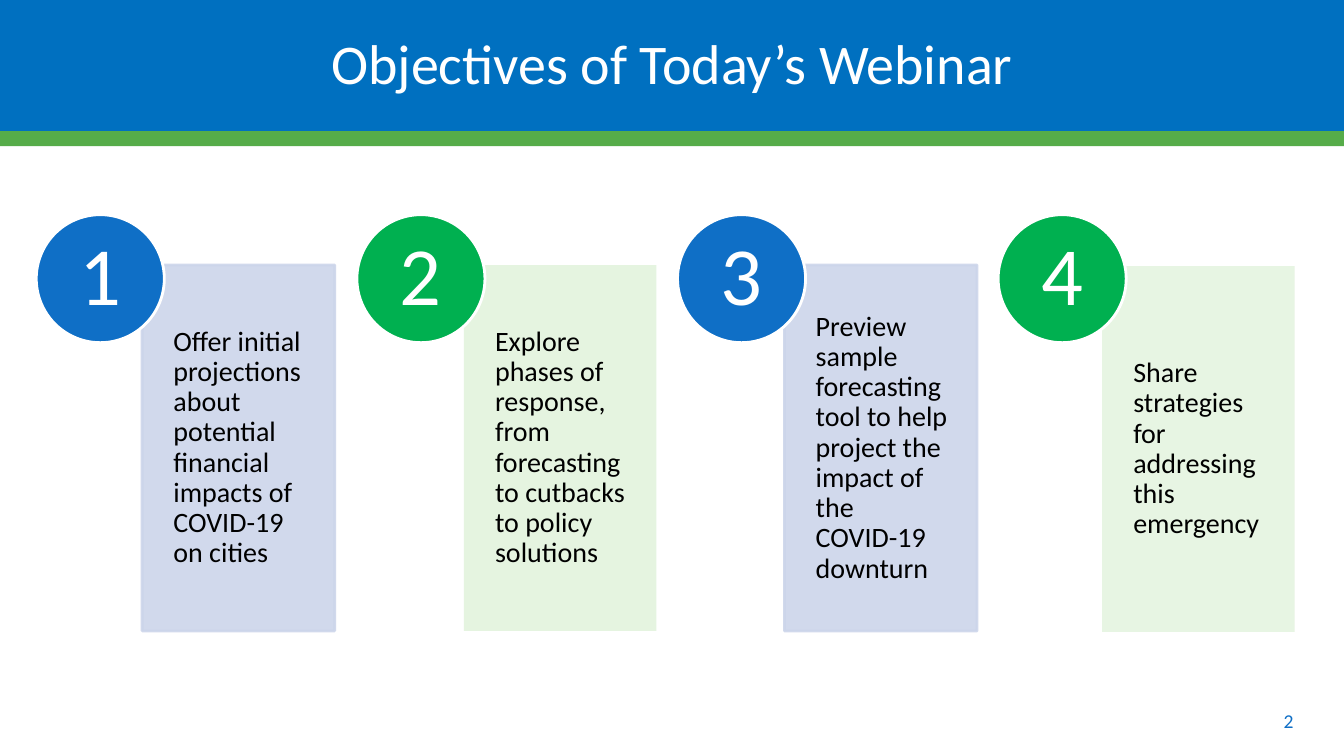
from lxml import etree
from pptx import Presentation
from pptx.dml.color import RGBColor
from pptx.enum.shapes import MSO_SHAPE
from pptx.enum.text import MSO_ANCHOR, MSO_AUTO_SIZE, PP_ALIGN
from pptx.oxml.ns import qn
from pptx.util import Inches, Pt

RECTANGLE, OVAL = MSO_SHAPE.RECTANGLE, MSO_SHAPE.OVAL
LEFT, CENTER = PP_ALIGN.LEFT, PP_ALIGN.CENTER
MIDDLE = MSO_ANCHOR.MIDDLE
NO_AUTOFIT = MSO_AUTO_SIZE.NONE

FONT = "Calibri"
WHITE, BLACK = "FFFFFF", "000000"
BANNER_BLUE, STRIPE_GREEN = "0070C0", "56AC49"
BLUE, GREEN = "0F6FC6", "00B050"
PALE_BLUE, PALE_GREEN = "CCD5EA", "E5F4E0"

PAGE_WIDTH, PAGE_HEIGHT = 13.33, 7.5
COLUMN_LEFT, COLUMN_TOP, COLUMN_PITCH = 0.36, 2.13, 3.18
CIRCLE_SIZE = 1.27
CARD_WIDTH, CARD_HEIGHT = 1.91, 3.63
TEXT_INDENT = 0.31

# Text, circle colour, card colour, card border, card opacity, card offset
OBJECTIVES = [
    ("Offer initial projections about potential financial impacts of "
     "COVID-19 on cities", BLUE, PALE_BLUE, PALE_BLUE, 90, (1.05, 0.5)),
    ("Explore phases of response, from forecasting to cutbacks to policy "
     "solutions", GREEN, PALE_GREEN, None, 100, (1.06, 0.5)),
    ("Preview sample forecasting tool to help project the impact of the "
     "COVID-19 downturn", BLUE, PALE_BLUE, PALE_BLUE, 90, (1.06, 0.5)),
    ("Share strategies for addressing this emergency",
     GREEN, PALE_GREEN, None, 90, (1.03, 0.51)),
]


def color(value):
    return RGBColor.from_string(value)


def set_opacity(shape, percent):
    for node in shape._element.spPr.iter(qn("a:srgbClr")):
        etree.SubElement(node, qn("a:alpha"), val=str(percent * 1000))


def format_text(shape, size, ink, align=CENTER, insets=(0, 0, 0, 0), spacing=0.9):
    """Format the single paragraph of a shape; insets run left, top, right, bottom."""
    frame = shape.text_frame
    frame_format = {"word_wrap": True, "auto_size": NO_AUTOFIT, "vertical_anchor": MIDDLE}
    sides = ("margin_left", "margin_top", "margin_right", "margin_bottom")
    frame_format.update(zip(sides, map(Inches, insets)))
    for name, value in frame_format.items():
        setattr(frame, name, value)
    para = frame.paragraphs[0]
    para.alignment = align
    para.line_spacing = spacing
    for name, value in {"name": FONT, "size": Pt(size)}.items():
        setattr(para.font, name, value)
        for span in para.runs:
            setattr(span.font, name, value)
    para.font.color.rgb = color(ink)
    for span in para.runs:
        span.font.color.rgb = color(ink)


def add_block(page, kind, box, fill, border=None):
    shape = page.shapes.add_shape(kind, *map(Inches, box))
    shape.shadow.inherit = False
    shape.fill.solid()
    shape.fill.fore_color.rgb = color(fill)
    if border:
        shape.line.color.rgb = color(border)
        shape.line.width = Pt(2)
    else:
        shape.line.fill.background()
    return shape


def add_header(page, left, top, width, height):
    title = page.shapes.title
    box = {"left": left, "top": top, "width": width, "height": height}
    for name, value in box.items():
        setattr(title, name, Inches(value))
    title.fill.solid()
    title.fill.fore_color.rgb = color(BANNER_BLUE)
    title.text_frame.text = "Objectives of Today’s Webinar"
    format_text(title, 40, WHITE, insets=(0.1, 0.1, 0.1, 0.05))
    add_block(page, RECTANGLE, (left, top + height, width, 0.15), STRIPE_GREEN)


def add_objective(page, left, top, number, objective):
    text, circle_fill, card_fill, border, opacity, (shift_x, shift_y) = objective
    card_left, card_top = left + shift_x, top + shift_y
    card = add_block(page, RECTANGLE, (card_left, card_top, CARD_WIDTH, CARD_HEIGHT),
                     card_fill, border)
    if opacity < 100:
        set_opacity(card, opacity)
    card.text_frame.text = text
    format_text(card, 20, BLACK, LEFT, (TEXT_INDENT, 0.16, 0.16, 0.16))
    circle = add_block(page, OVAL, (left, top, CIRCLE_SIZE, CIRCLE_SIZE), circle_fill, WHITE)
    circle.text_frame.text = str(number)
    format_text(circle, 59, WHITE)


def add_page_number(page, left, top, width, height):
    box = page.shapes.add_textbox(*map(Inches, (left, top, width, height)))
    box.text_frame.text = "2"
    format_text(box, 14, BLUE, insets=(0.1, 0.05, 0.1, 0.05), spacing=1.0)


def main():
    deck = Presentation()
    deck.slide_width, deck.slide_height = Inches(PAGE_WIDTH), Inches(PAGE_HEIGHT)
    page = deck.slides.add_slide(deck.slide_layouts[5])
    add_header(page, 0, -0.03, PAGE_WIDTH, 1.33)
    for index, objective in enumerate(OBJECTIVES):
        left = COLUMN_LEFT + index * COLUMN_PITCH
        add_objective(page, left, COLUMN_TOP, index + 1, objective)
    add_page_number(page, 12.28, 6.95, 1, 0.4)
    deck.save("out.pptx")


if __name__ == "__main__":
    main()
